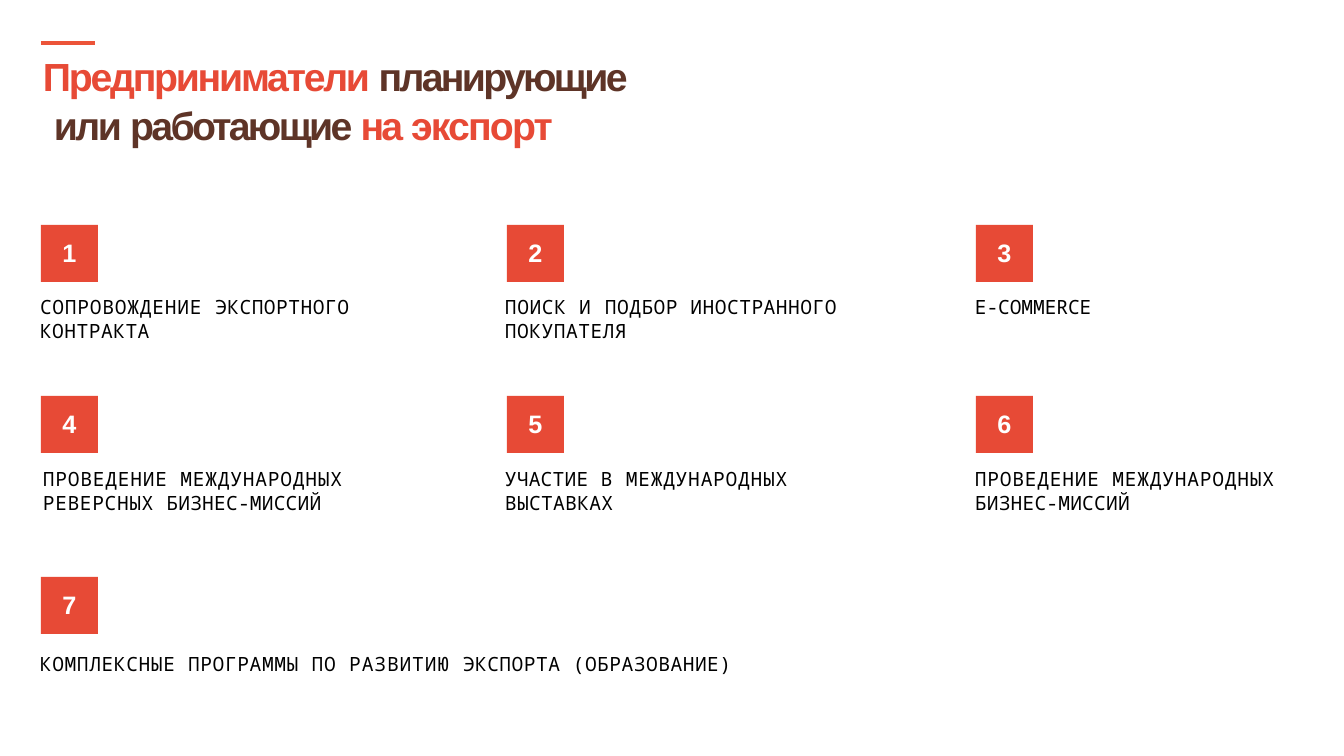
from pptx import Presentation
from pptx.dml.color import RGBColor
from pptx.enum.shapes import MSO_CONNECTOR, MSO_SHAPE
from pptx.enum.text import MSO_ANCHOR, PP_ALIGN
from pptx.oxml.ns import qn
from pptx.util import Emu, Pt
from lxml.etree import SubElement

RED = RGBColor(0xE7, 0x4A, 0x36)
ACCENT = RGBColor(0xEC, 0x54, 0x39)
BROWN = RGBColor(0x5E, 0x34, 0x27)
BLACK = RGBColor(0, 0, 0)
WHITE = RGBColor(255, 255, 255)

TITLE_FONT = {"name": "Arial", "size": Pt(28), "bold": True}
NUMBER_FONT = {"name": "Arial", "size": Pt(18), "bold": True}
ITEM_FONT = {"name": "Noto Sans Mono", "size": Pt(14), "bold": False}

TITLE = [
    ("Предприниматели ", -1.6, RED),
    ("планирующие ", -1.9, BROWN),
    ("или ", -1.8, BROWN),
    ("работающие ", -1.9, BROWN),
    ("на ", -2, RED),
    ("экспорт", -1.3, RED),
]
ITEMS = [
    (40, 343, [("СОПРОВОЖДЕНИЕ ", 0.5), ("ЭКСПОРТНОГО КОНТРАКТА", 0.3)]),
    (505, 358, [("ПОИСК ", 0.4), ("И ", 0.8), ("ПОДБОР ИНОСТРАННОГО ПОКУПАТЕЛЯ", 0.3)]),
    (975, 134, [("E-COMMERCE", -0.1)]),
    (43, 332, [("ПРОВЕДЕНИЕ МЕЖДУНАРОДНЫХ ", 0.5), ("РЕВЕРСНЫХ ", 0.4), ("БИЗНЕС-МИССИЙ", 0.1)]),
    (505, 305, [("УЧАСТИЕ ", 0.1), ("В ", 0.6), ("МЕЖДУНАРОДНЫХ ", 0.5), ("ВЫСТАВКАХ", 0.2)]),
    (975, 332, [("ПРОВЕДЕНИЕ МЕЖДУНАРОДНЫХ ", 0.5), ("БИЗНЕС-МИССИЙ", 0.1)]),
    (40, 721, [("КОМПЛЕКСНЫЕ ПРОГРАММЫ ", 0.4), ("ПО ", 0.5), ("РАЗВИТИЮ ", 0.6),
               ("ЭКСПОРТА (ОБРАЗОВАНИЕ)", 0.3)]),
]
COLUMNS = [41, 507, 976]
ROWS = [(225, 295), (396, 467), (577, 652)]
SQUARE = 57
ITEM_HEIGHT = 50


def px(length):
    return Emu(round(length * 914400 / 100.8))


def box(*lengths):
    return [px(length) for length in lengths]


def write(shape, runs, font, alignment=PP_ALIGN.LEFT, inset_top=0):
    frame = shape.text_frame
    frame_format = {
        "word_wrap": True, "vertical_anchor": MSO_ANCHOR.TOP,
        "margin_left": 0, "margin_right": 0, "margin_bottom": 0,
        "margin_top": px(inset_top),
    }
    for name, value in frame_format.items():
        setattr(frame, name, value)
    paragraph = frame.paragraphs[0]
    paragraph.alignment = alignment
    for text, spacing, color in runs:
        run = paragraph.add_run()
        run.text = text
        for name, value in font.items():
            setattr(run.font, name, value)
        run.font.color.rgb = color
        run._r.get_or_add_rPr().set("spc", str(round(spacing * 100)))
    return paragraph


presentation = Presentation()
presentation.slide_width = px(1344)
presentation.slide_height = px(756)
slide = presentation.slides.add_slide(presentation.slide_layouts[5])

accent = slide.shapes.add_connector(MSO_CONNECTOR.STRAIGHT, *box(41, 43, 95, 43))
accent.line.color.rgb = ACCENT
accent.line.width = Pt(3)
SubElement(accent._element.spPr, qn("a:effectLst"))

title = slide.shapes.title
for name, value in zip(("left", "top", "width", "height"), box(42, 50, 590, 97)):
    setattr(title, name, value)
title_paragraph = write(title, TITLE, TITLE_FONT)
title_paragraph.line_spacing = 1.04
title_properties = title_paragraph._p.get_or_add_pPr()
title_properties.set("marL", str(px(12)))
title_properties.set("indent", str(-px(11)))

for index, (text_left, text_width, runs) in enumerate(ITEMS):
    row, column = divmod(index, len(COLUMNS))
    square_top, text_top = ROWS[row]
    square = slide.shapes.add_shape(
        MSO_SHAPE.RECTANGLE, *box(COLUMNS[column], square_top, SQUARE, SQUARE))
    square.shadow.inherit = False
    square.fill.solid()
    square.fill.fore_color.rgb = RED
    square.line.fill.background()
    write(square, [(str(index + 1), 0, WHITE)], NUMBER_FONT, PP_ALIGN.CENTER, 12)
    label = slide.shapes.add_textbox(*box(text_left, text_top, text_width, ITEM_HEIGHT))
    write(label, [(text, spacing, BLACK) for text, spacing in runs], ITEM_FONT)

presentation.save("out.pptx")
